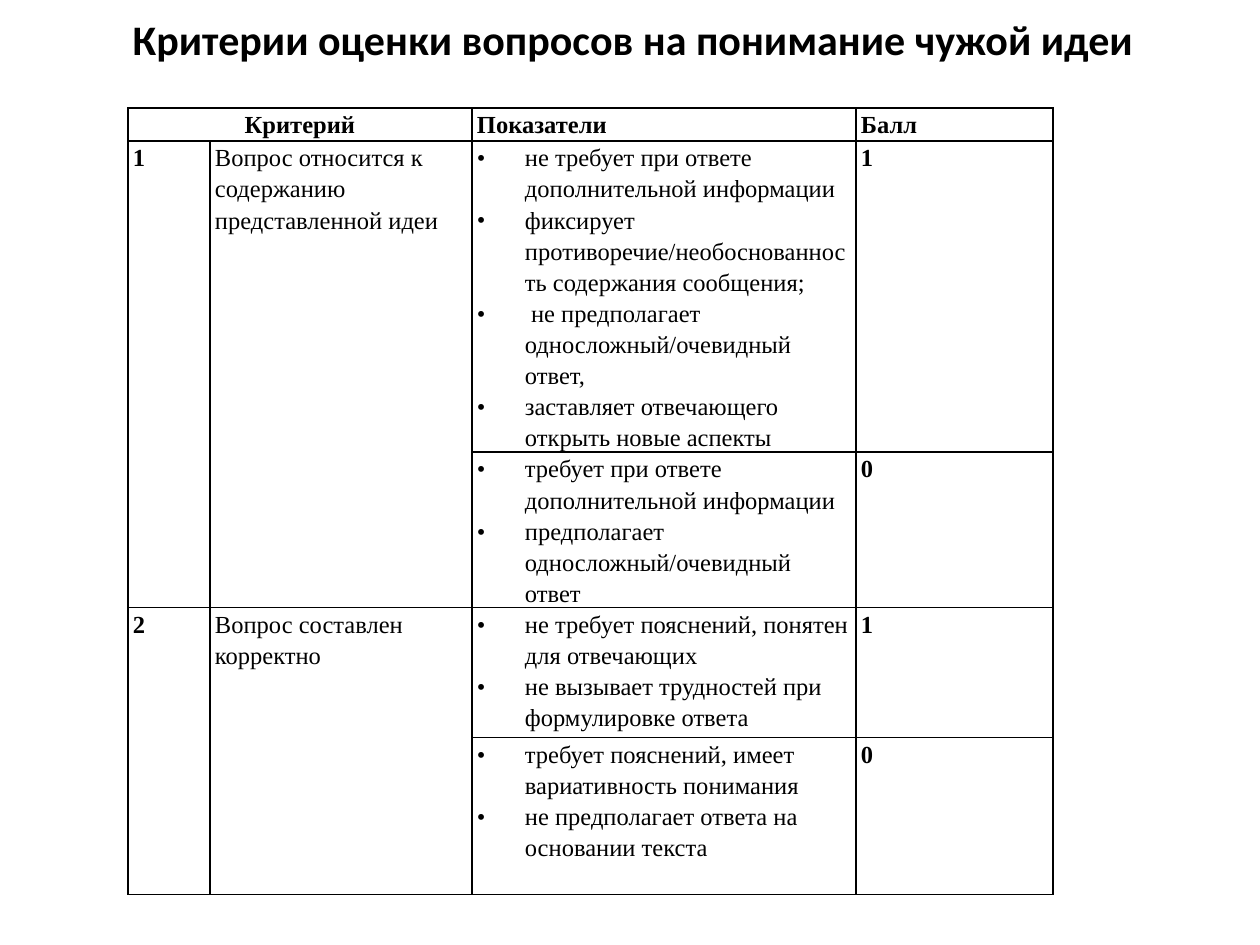
"""Build a slide with a table of criteria for judging questions about an idea."""
from copy import deepcopy

from lxml import etree
from pptx import Presentation
from pptx.dml.color import RGBColor
from pptx.enum.text import MSO_ANCHOR, PP_ALIGN
from pptx.oxml.ns import qn
from pptx.util import Pt

PX = 914400 / 126
CENTER, LEFT = PP_ALIGN.CENTER, PP_ALIGN.LEFT
MIDDLE = MSO_ANCHOR.MIDDLE
BLACK = "000000"
INDENT = 48


def px(count):
    return round(count * PX)


def style(span, name, size, bold, color=BLACK):
    for key, value in {"name": name, "size": Pt(size), "bold": bold}.items():
        setattr(span.font, key, value)
    span.font.color.rgb = RGBColor.from_string(color)


deck = Presentation()
deck.slide_width, deck.slide_height = px(1260), px(945)
page = deck.slides.add_slide(deck.slide_layouts[5])

title = page.shapes.title
for key, value in {"left": 49, "top": 39, "width": 1168, "height": 50}.items():
    setattr(title, key, px(value))
title.text_frame.vertical_anchor = MIDDLE
para = title.text_frame.paragraphs[0]
para.alignment = CENTER
span = para.add_run()
span.text = "Критерии оценки вопросов на понимание чужой идеи"
style(span, "Calibri", 24, True)
para.add_line_break()
para._p.find(qn("a:br")).append(deepcopy(span._r.find(qn("a:rPr"))))

widths = [82, 262, 384, 197]
heights = [33, 294, 135, 130, 157]
rows = [
    ["Критерий", "", "Показатели", "Балл"],
    ["1", "Вопрос относится к содержанию представленной идеи", [
        "не требует при ответе дополнительной информации",
        "фиксирует противоречие/необоснованность содержания сообщения;",
        " не предполагает односложный/очевидный ответ,",
        "заставляет отвечающего открыть новые аспекты"], "1"],
    ["", "", [
        "требует при ответе дополнительной информации",
        "предполагает односложный/очевидный ответ"], "0"],
    ["2", "Вопрос составлен корректно", [
        "не требует пояснений, понятен для отвечающих",
        "не вызывает трудностей при формулировке ответа"], "1"],
    ["", "", [
        "требует пояснений, имеет вариативность понимания",
        "не предполагает ответа на основании текста"], "0"],
]

frame = page.shapes.add_table(len(rows), len(widths), px(128), px(108),
                              px(sum(widths)), px(sum(heights)))
table = frame.table
table.first_row = table.horz_banding = False
for column, width in zip(table.columns, widths):
    column.width = px(width)
for row, height in zip(table.rows, heights):
    row.height = px(height)

table.cell(0, 0).merge(table.cell(0, 1))
for top in (1, 3):
    for side in (0, 1):
        table.cell(top, side).merge(table.cell(top + 1, side))

for r, row in enumerate(rows):
    for c, content in enumerate(row):
        cell = table.cell(r, c)
        margins = {"margin_left": 5, "margin_right": 5, "margin_top": 0, "margin_bottom": 0}
        for key, value in margins.items():
            setattr(cell, key, px(value))
        for edge in ("lnL", "lnR", "lnT", "lnB"):
            line = etree.SubElement(cell._tc.get_or_add_tcPr(), qn(f"a:{edge}"), w=str(Pt(1)))
            paint = etree.SubElement(line, qn("a:solidFill"))
            etree.SubElement(paint, qn("a:srgbClr"), val=BLACK)
        cell.fill.background()
        if not content:
            continue
        bulleted = isinstance(content, list)
        lines = content if bulleted else [content]
        for n, text in enumerate(lines):
            para = cell.text_frame.add_paragraph() if n else cell.text_frame.paragraphs[0]
            para.alignment = CENTER if r == c == 0 else LEFT
            para.line_spacing = 1.15
            span = para.add_run()
            span.text = text
            style(span, "Times New Roman", 14, r == 0 or c in (0, 3))
            if bulleted:
                props = para._p.get_or_add_pPr()
                props.set("marL", str(px(INDENT)))
                props.set("indent", str(-px(INDENT)))
                etree.SubElement(props, qn("a:buFont"), typeface="Times New Roman")
                etree.SubElement(props, qn("a:buChar"), char="•")

deck.save("out.pptx")
